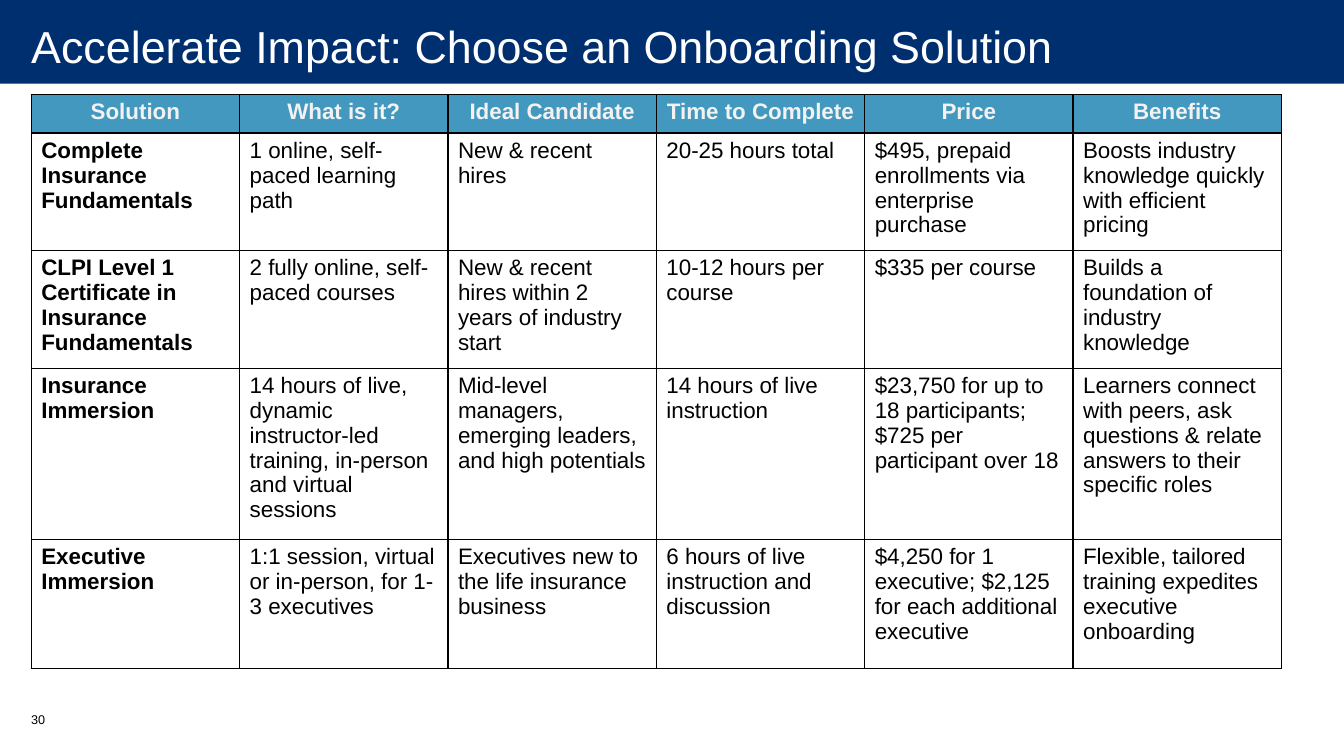
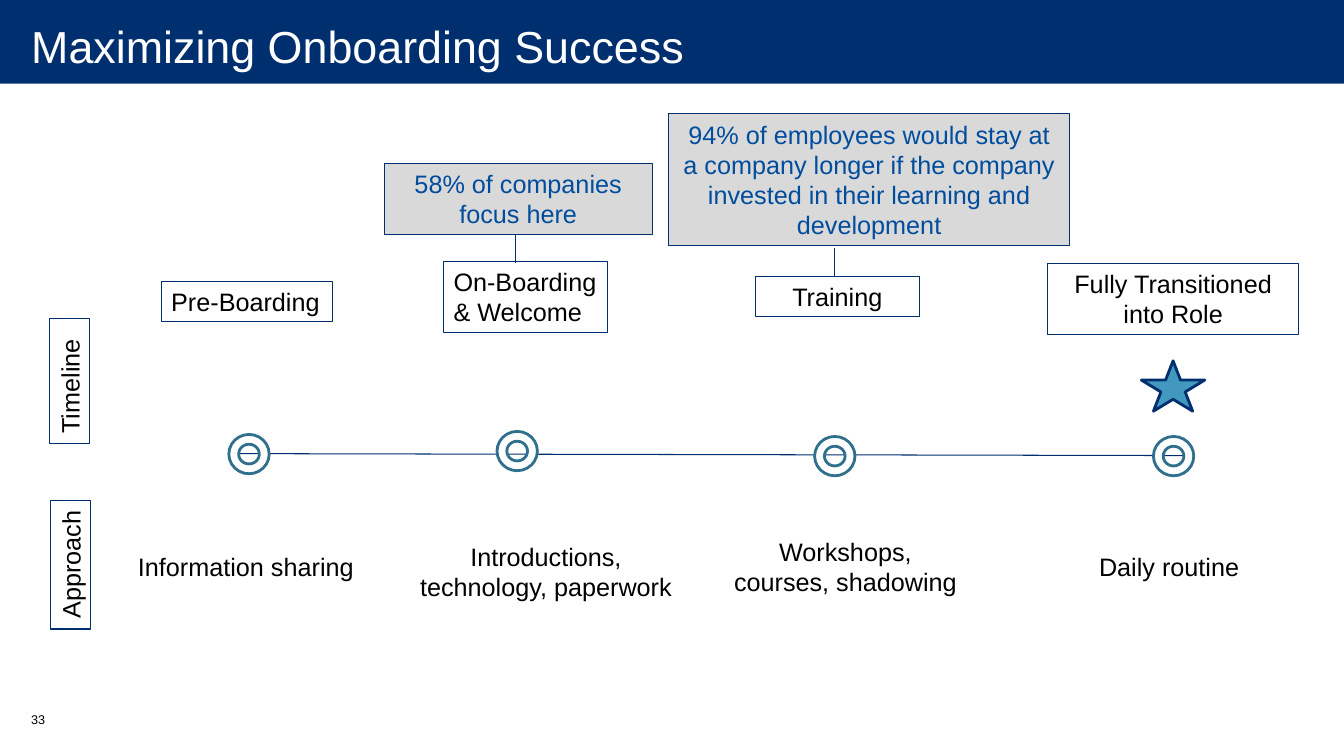
from pptx import Presentation
from pptx.dml.color import RGBColor
from pptx.enum import shapes, text
from pptx.oxml import parse_xml
from pptx.oxml.ns import nsdecls, qn
from pptx.util import Inches, Pt
from lxml import etree

NAVY = RGBColor(0x00, 0x2F, 0x70)
BLUE = RGBColor(0x00, 0x4C, 0x9D)
SKY = RGBColor(0x42, 0x98, 0xBE)
TEAL = RGBColor(0x31, 0x70, 0x8D)
GRAY = RGBColor(0xD9, 0xD9, 0xD9)
PALE = RGBColor(0xF2, 0xF2, 0xF2)
WHITE = RGBColor(0xFF, 0xFF, 0xFF)
BLACK = RGBColor(0x00, 0x00, 0x00)
FONT = "Arial"
WIDE = 13.33
KIND = shapes.MSO_SHAPE
LEFT, MID = text.PP_ALIGN.LEFT, text.PP_ALIGN.CENTER

# Content: solutions table
HEAD = ["Solution", "What is it?", "Ideal Candidate", "Time to Complete",
        "Price", "Benefits"]
ROWS = [
    ["Complete Insurance Fundamentals",
     "1 online, self-paced learning path",
     "New & recent hires",
     "20-25 hours total",
     "$495, prepaid enrollments via enterprise purchase",
     "Boosts industry knowledge quickly with efficient pricing"],
    ["CLPI Level 1 Certificate in Insurance Fundamentals",
     "2 fully online, self-paced courses",
     "New & recent hires within 2 years of industry start",
     "10-12 hours per course",
     "$335 per course",
     "Builds a foundation of industry knowledge"],
    ["Insurance Immersion",
     "14 hours of live, dynamic instructor-led training, in-person "
     "and virtual sessions",
     "Mid-level managers, emerging leaders, and high potentials",
     "14 hours of live instruction",
     "$23,750 for up to 18 participants; $725 per participant over 18",
     "Learners connect with peers, ask questions & relate answers to "
     "their specific roles"],
    ["Executive Immersion",
     "1:1 session, virtual or in-person, for 1-3 executives",
     "Executives new to the life insurance business",
     "6 hours of live instruction and discussion",
     "$4,250 for 1 executive; $2,125 for each additional executive",
     "Flexible, tailored training expedites executive onboarding"],
]
HIGH = [0.38, 1.04, 1.04, 1.52, 1.28]

# Content: timeline, as (words, (left, top, width, height), alignment)
STAGES = [
    ("Pre-Boarding", (1.6, 2.79, 1.7, 0.4), LEFT),
    ("On-Boarding & Welcome", (4.4, 2.59, 1.63, 0.71), LEFT),
    ("Training", (7.49, 2.74, 1.63, 0.4), MID),
    ("Fully Transitioned into Role", (10.39, 2.61, 2.49, 0.71), MID),
]
SIDES = [
    ("Timeline", (0.07, 3.58, 1.24, 0.4), LEFT),
    ("Approach", (0.06, 5.4, 1.28, 0.4), MID),
]
FACTS = [
    ("58% of companies focus here", (3.81, 1.62, 2.66, 0.71), MID),
    ("94% of employees would stay at a company longer if the company "
     "invested in their learning and development",
     (6.63, 1.13, 3.98, 1.31), MID),
]
STEPS = [
    ("Information sharing", (1.27, 5.42, 2.41, 0.4), LEFT),
    ("Introductions, technology, paperwork", (3.93, 5.32, 2.97, 0.71), MID),
    ("Workshops, courses, shadowing", (7.16, 5.27, 2.45, 0.71), MID),
    ("Daily routine", (10.57, 5.42, 2.05, 0.4), MID),
]
RINGS = [(2.27, 4.31), (4.93, 4.28), (8.08, 4.33), (11.44, 4.33)]
AXIS = (2.27, 4.5, 11.83, 4.52)
LINKS = [(5.11, 2.32, 5.11, 2.61), (8.28, 2.46, 8.28, 2.74)]


def spots(box):
    return [Inches(n) for n in box]


def write(para, words, size, color=BLACK, bold=False, align=LEFT):
    para.alignment = align
    run = para.add_run()
    run.text = words
    font = run.font
    font.name, font.size, font.bold = FONT, Pt(size), bold
    font.color.rgb = color


def draw(slide, kind, box, fill=None, line=None, width=0.75):
    shape = slide.shapes.add_shape(kind, *spots(box))
    shape.shadow.inherit = False
    if fill is None:
        shape.fill.background()
    else:
        shape.fill.solid()
        shape.fill.fore_color.rgb = fill
    if line is None:
        shape.line.fill.background()
    else:
        shape.line.color.rgb = line
        shape.line.width = Pt(width)
    return shape


def fill_in(shape, words, align, color=BLACK):
    frame = shape.text_frame
    frame.word_wrap = True
    frame.vertical_anchor = text.MSO_ANCHOR.TOP
    write(frame.paragraphs[0], words, 18, color, align=align)


def label(slide, item, fill=None, color=BLACK, turn=0):
    words, box, align = item
    shape = draw(slide, KIND.RECTANGLE, box, fill, NAVY)
    shape.rotation = turn
    fill_in(shape, words, align, color)


def join(slide, ends):
    line = slide.shapes.add_connector(shapes.MSO_CONNECTOR.STRAIGHT,
                                      *spots(ends))
    line.line.color.rgb = NAVY
    line.line.width = Pt(0.75)
    etree.SubElement(line.element.spPr, qn("a:effectLst"))


def add_band(slide):
    # The band moves to the layout, behind every title
    band = draw(slide, KIND.RECTANGLE, (0, -0.03, WIDE, 0.86), NAVY)
    slide.slide_layout.shapes.element.insert(2, band.element)


def start(deck, title, page):
    slide = deck.slides.add_slide(deck.slide_layouts[5])
    head = slide.shapes.title
    head.left, head.top, head.width, head.height = spots(
        (0.01, -0.03, WIDE, 0.97))
    frame = head.text_frame
    frame.auto_size = text.MSO_AUTO_SIZE.NONE
    frame.word_wrap = False
    frame.vertical_anchor = text.MSO_ANCHOR.MIDDLE
    frame.margin_left, frame.margin_right = Inches(0.3), Inches(0.2)
    frame.margin_top = frame.margin_bottom = 0
    write(frame.paragraphs[0], title, 32, WHITE)
    foot = slide.shapes.add_textbox(*spots((0.21, 7.01, 0.49, 0.4)))
    foot.text_frame.word_wrap = True
    write(foot.text_frame.paragraphs[0], page, 9)
    return slide


def edge(cell):
    props = cell._tc.get_or_add_tcPr()
    for at, side in enumerate(("lnL", "lnR", "lnT", "lnB")):
        props.insert(at, parse_xml(
            f'<a:{side} {nsdecls("a")} w="12700"><a:solidFill>'
            f'<a:srgbClr val="{BLACK}"/></a:solidFill></a:{side}>'))


def add_grid(slide):
    box = (0.31, 0.94, 12.4, sum(HIGH))
    grid = slide.shapes.add_table(len(HIGH), len(HEAD), *spots(box)).table
    for col in grid.columns:
        col.width = Inches(12.4 / len(HEAD))
    for r, (high, row) in enumerate(zip(HIGH, [HEAD] + ROWS)):
        grid.rows[r].height = Inches(high)
        for c, words in enumerate(row):
            cell, top = grid.cell(r, c), r == 0
            if top:
                cell.fill.solid()
                cell.fill.fore_color.rgb = SKY
            else:
                cell.fill.background()
            edge(cell)
            write(cell.text_frame.paragraphs[0], words, 16,
                  PALE if top else BLACK, top or c == 0,
                  MID if top else LEFT)


def add_path(slide):
    join(slide, AXIS)
    for item in STAGES:
        label(slide, item)
    for item in SIDES:
        label(slide, item, turn=270)
    for item in FACTS:
        label(slide, item, GRAY, BLUE)
    for words, box, align in STEPS:
        note = slide.shapes.add_textbox(*spots(box))
        fill_in(note, words, align)
    draw(slide, KIND.STAR_5_POINT, (11.32, 3.58, 0.63, 0.5), SKY, NAVY, 2)
    for x, y in RINGS:
        draw(slide, KIND.DONUT, (x, y, 0.4, 0.39), WHITE, TEAL, 2)
    for ends in LINKS:
        join(slide, ends)


def main():
    deck = Presentation()
    deck.slide_width, deck.slide_height = Inches(WIDE), Inches(7.5)
    first = start(deck, "Accelerate Impact: Choose an Onboarding Solution",
                  "30")
    add_band(first)
    add_grid(first)
    add_path(start(deck, "Maximizing Onboarding Success", "33"))
    deck.save("out.pptx")


if __name__ == "__main__":
    main()
